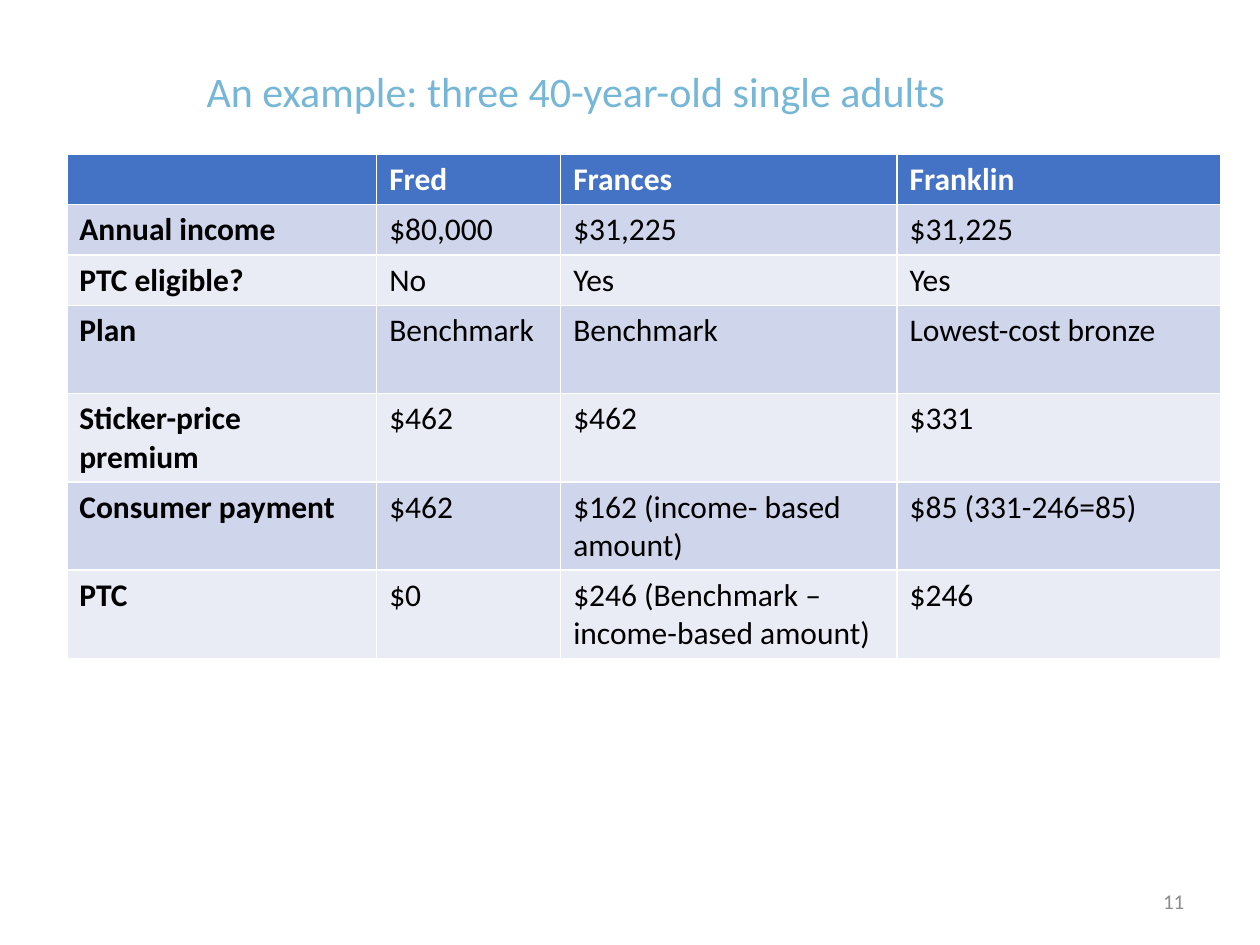
from pptx import Presentation
from pptx.dml.color import RGBColor as Rgb
from pptx.enum.text import MSO_ANCHOR as Anchor, PP_ALIGN as Align
from pptx.util import Inches, Pt

WIDTH, HEIGHT = Inches(10), Inches(7.5)
FONT = "Calibri"
COLORS = {
    "title": "76B6D7",
    "header": "4472C4",
    "odd_row": "CFD5EA",
    "even_row": "E9EBF5",
    "header_text": "FFFFFF",
    "body_text": "000000",
    "page_number": "8C8C8C",
}
COLUMN_WIDTHS = [2.46, 1.46, 2.67, 2.57]
ROW_HEIGHTS = [0.4, 0.4, 0.4, 0.7, 0.7, 0.7, 0.7]
COMPARISON = [
    ["", "Fred", "Frances", "Franklin"],
    ["Annual income", "$80,000", "$31,225", "$31,225"],
    ["PTC eligible?", "No", "Yes", "Yes"],
    ["Plan", "Benchmark", "Benchmark", "Lowest-cost bronze"],
    ["Sticker-price premium", "$462", "$462", "$331"],
    ["Consumer payment", "$462", "$162 (income- based amount)", "$85 (331-246=85)"],
    ["PTC", "$0", "$246 (Benchmark – income-based amount)", "$246"],
]


def share(left, top, width, height):
    return (int(WIDTH * left), int(HEIGHT * top),
            int(WIDTH * width), int(HEIGHT * height))


def style(paragraph, size, color, bold=False, align=Align.LEFT):
    paragraph.alignment = align
    font = paragraph.font
    font.name, font.size, font.bold = FONT, Pt(size), bold
    font.color.rgb = Rgb.from_string(COLORS[color])


def set_title(slide, wording):
    title = slide.shapes.title
    title.left, title.top, title.width, title.height = share(0.154, 0.035, 0.794, 0.128)
    title.text_frame.text = wording
    title.text_frame.vertical_anchor = Anchor.MIDDLE
    heading = title.text_frame.paragraphs[0]
    heading.line_spacing = 0.9
    style(heading, 24, "title")


def add_page_number(slide, number):
    frame = slide.shapes.add_textbox(*share(0.903, 0.927, 0.057, 0.053)).text_frame
    frame.word_wrap = True
    frame.vertical_anchor = Anchor.MIDDLE
    frame.text = number
    style(frame.paragraphs[0], 12, "page_number", align=Align.CENTER)


def fill_cell(cell, wording, row, column):
    band = "header" if row == 0 else "odd_row" if row % 2 else "even_row"
    cell.fill.solid()
    cell.fill.fore_color.rgb = Rgb.from_string(COLORS[band])
    cell.text = wording
    style(cell.text_frame.paragraphs[0], 18,
          "header_text" if row == 0 else "body_text", bold=row == 0 or column == 0)


def add_comparison(slide):
    table = slide.shapes.add_table(
        len(ROW_HEIGHTS), len(COLUMN_WIDTHS), *share(0.053, 0.163, 0.917, 0.533)).table
    for column, width in zip(table.columns, COLUMN_WIDTHS):
        column.width = Inches(width)
    for row, height in zip(table.rows, ROW_HEIGHTS):
        row.height = Inches(height)
    for r, entries in enumerate(COMPARISON):
        for c, wording in enumerate(entries):
            fill_cell(table.cell(r, c), wording, r, c)


def main():
    deck = Presentation()
    deck.slide_width, deck.slide_height = WIDTH, HEIGHT
    slide = deck.slides.add_slide(deck.slide_layouts[5])
    set_title(slide, "An example: three 40-year-old single adults")
    add_page_number(slide, "11")
    add_comparison(slide)
    deck.save("out.pptx")


if __name__ == "__main__":
    main()
